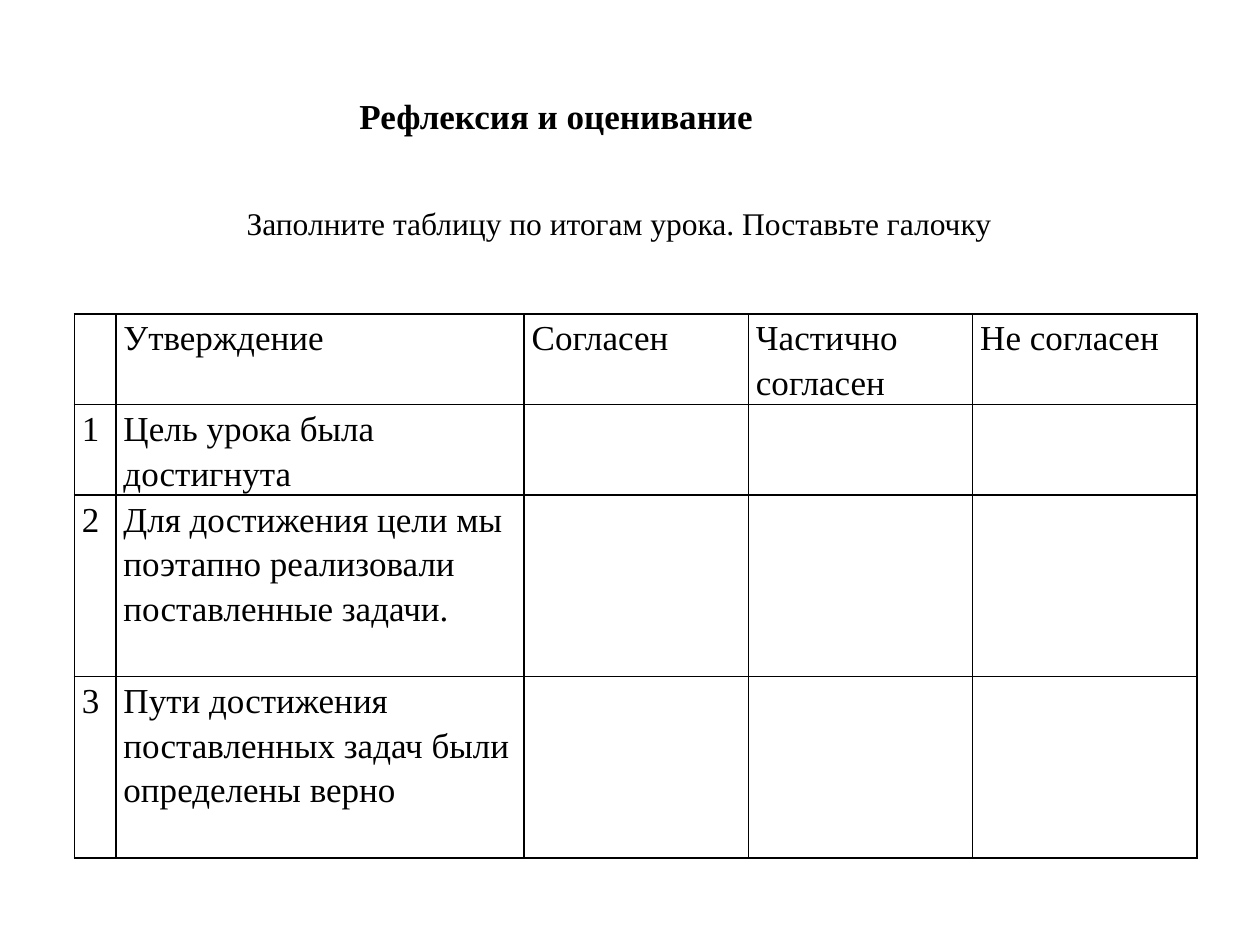
from lxml import etree
from pptx import Presentation
from pptx.dml.color import RGBColor
from pptx.enum import text
from pptx.oxml import ns
from pptx.util import Inches, Pt

COLORS = {"ink": "000000", "paper": "FFFFFF"}
COLUMN_WIDTHS = [0.33, 3.24, 1.78, 1.78, 1.78]
ROW_HEIGHTS = [0.72, 0.72, 1.44, 1.44]
ANSWERS = ["Согласен", "Частично согласен", "Не согласен"]
STATEMENTS = [
    "Цель урока была достигнута",
    "Для достижения цели мы поэтапно реализовали поставленные задачи.",
    "Пути достижения поставленных задач были определены верно",
]


class SlideBuilder:
    font_name = "Times New Roman"

    def __init__(self, slide):
        self.slide = slide

    def style(self, paragraph, size, bold=False):
        for run in paragraph.runs:
            run.font.name = self.font_name
            run.font.size = Pt(size)
            run.font.bold = bold
            run.font.color.rgb = RGBColor.from_string(COLORS["ink"])

    def placeholder(self, index, wording, box, size, anchor, bold=False):
        shape = self.slide.placeholders[index]
        shape.left, shape.top, shape.width, shape.height = map(Inches, box)
        frame = shape.text_frame
        frame.text = wording
        frame.word_wrap = True
        frame.auto_size = text.MSO_AUTO_SIZE.NONE
        frame.vertical_anchor = anchor
        paragraph = frame.paragraphs[0]
        properties = paragraph._p.get_or_add_pPr()
        properties.set("marL", "0")
        properties.set("indent", "0")
        etree.SubElement(properties, ns.qn("a:buNone"))
        paragraph.alignment = text.PP_ALIGN.CENTER
        paragraph.space_before = Pt(0)
        self.style(paragraph, size, bold)

    def borders(self, cell, width=1):
        properties = cell._tc.get_or_add_tcPr()
        for position, side in enumerate(("lnL", "lnR", "lnT", "lnB")):
            line = etree.Element(ns.qn(f"a:{side}"), w=str(Pt(width)))
            fill = etree.SubElement(line, ns.qn("a:solidFill"))
            etree.SubElement(fill, ns.qn("a:srgbClr"), val=COLORS["ink"])
            properties.insert(position, line)

    def table(self, left, top, rows, size):
        table = self.slide.shapes.add_table(
            len(rows), len(COLUMN_WIDTHS), Inches(left), Inches(top),
            Inches(sum(COLUMN_WIDTHS)), Inches(sum(ROW_HEIGHTS))).table
        table.first_row = table.horz_banding = False
        for column, width in zip(table.columns, COLUMN_WIDTHS):
            column.width = Inches(width)
        for row, height, wordings in zip(table.rows, ROW_HEIGHTS, rows):
            row.height = Inches(height)
            for cell, wording in zip(row.cells, wordings):
                self.cell(cell, wording, size)

    def cell(self, cell, wording, size):
        cell.margin_left = cell.margin_right = Inches(0.06)
        cell.margin_top = cell.margin_bottom = 0
        cell.fill.solid()
        cell.fill.fore_color.rgb = RGBColor.from_string(COLORS["paper"])
        self.borders(cell)
        if wording:
            cell.text_frame.text = wording
            paragraph = cell.text_frame.paragraphs[0]
            paragraph.line_spacing = 1.15
            self.style(paragraph, size)


def main():
    presentation = Presentation()
    presentation.slide_width, presentation.slide_height = Inches(10), Inches(7.5)
    slide = presentation.slides.add_slide(presentation.slide_layouts[1])
    builder = SlideBuilder(slide)
    builder.placeholder(0, "Рефлексия и оценивание", (2.01, 0.36, 4.81, 0.77),
                        20, text.MSO_ANCHOR.BOTTOM, bold=True)
    builder.placeholder(1, "Заполните таблицу по итогам урока. Поставьте галочку",
                        (0.5, 1.57, 8.83, 0.76), 18, text.MSO_ANCHOR.TOP)
    rows = [["", "Утверждение", *ANSWERS]]
    for number, statement in enumerate(STATEMENTS, 1):
        rows.append([str(number), statement] + [""] * len(ANSWERS))
    builder.table(0.59, 2.49, rows, 20)
    presentation.save("out.pptx")


if __name__ == "__main__":
    main()
